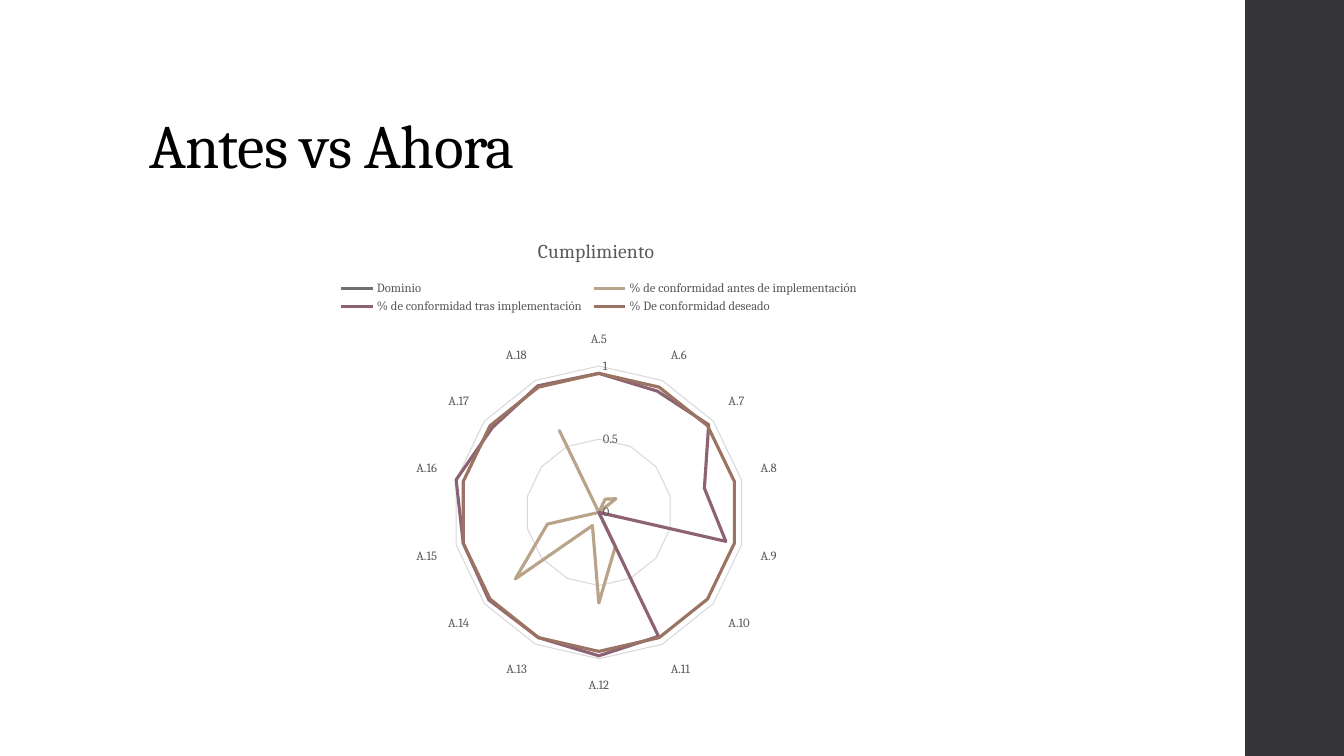
from lxml import etree
from pptx import Presentation
from pptx.chart.data import CategoryChartData
from pptx.dml.color import RGBColor
from pptx.enum.chart import XL_CHART_TYPE, XL_LEGEND_POSITION, XL_TICK_MARK
from pptx.enum.shapes import MSO_SHAPE
from pptx.enum.text import MSO_ANCHOR
from pptx.oxml.ns import qn
from pptx.util import Inches, Pt

RADAR = XL_CHART_TYPE.RADAR
LEGEND_TOP = XL_LEGEND_POSITION.TOP
NO_TICK = XL_TICK_MARK.NONE
RECTANGLE = MSO_SHAPE.RECTANGLE
BOTTOM = MSO_ANCHOR.BOTTOM

FONT = "Cambria"
BLACK = RGBColor(0x00, 0x00, 0x00)
DARK = RGBColor(0x35, 0x35, 0x37)
TEXT_GRAY = RGBColor(0x59, 0x59, 0x59)
GRID_GRAY = RGBColor(0xD9, 0xD9, 0xD9)
GRAY = RGBColor(0x6F, 0x6F, 0x74)
BLUE = RGBColor(0x92, 0xA9, 0xB9)
GREEN = RGBColor(0xA7, 0xB7, 0x89)
SAND = RGBColor(0xB9, 0xA4, 0x89)
PLUM = RGBColor(0x8D, 0x63, 0x74)
BROWN = RGBColor(0x9B, 0x73, 0x62)

SLIDE_TITLE = "Antes vs Ahora"
CHART_TITLE = "Cumplimiento"
DOMAINS = [f"A.{number}" for number in range(5, 19)]
EMPTY = [None] * len(DOMAINS)
SERIES = [
    ("Dominio", GRAY, [0] * len(DOMAINS)),
    ("Series 2", BLUE, EMPTY),
    ("Series 3", GREEN, EMPTY),
    ("% de conformidad antes de implementación", SAND,
     [0, 0.1, 0.15, 0, 0.14, 0, 0.26, 0.62, 0.1, 0.73, 0.36, 0, 0, 0.62]),
    ("% de conformidad tras implementación", PLUM,
     [0.95, 0.92, 0.96, 0.74, 0.89, 0, 0.94, 0.98, 0.95, 0.96, 0.95, 1, 0.93, 0.96]),
    ("% De conformidad deseado", BROWN, [0.95] * len(DOMAINS)),
]


def set_font(font, size, color):
    font.name = FONT
    font.size = Pt(size)
    font.bold = False
    font.color.rgb = color


def set_line(line, color, width):
    line.color.rgb = color
    line.width = Pt(width)


def write_text(frame, text, *, size, color, line_spacing=None, tracking=None):
    para = frame.paragraphs[0]
    span = para.add_run()
    span.text = text
    set_font(span.font, size, color)
    if line_spacing:
        para.line_spacing = line_spacing
    if tracking is not None:
        span.font._element.set("spc", str(round(tracking * 100)))


def place(parent, index, target=None, **fractions):
    """Fix a chart part at fractions of the chart's width and height."""
    for old in parent.findall(qn("c:layout")):
        parent.remove(old)
    layout = etree.Element(qn("c:layout"))
    manual = etree.SubElement(layout, qn("c:manualLayout"))
    settings = {"layoutTarget": target} if target else {}
    settings |= {"xMode": "edge", "yMode": "edge"} | fractions
    for name, value in settings.items():
        etree.SubElement(manual, qn(f"c:{name}")).set("val", str(value))
    parent.insert(index, layout)


def hide_empty_entries(legend):
    """Leave series without values out of the legend; return how many."""
    empty = [index for index, (_, _, values) in enumerate(SERIES) if values is EMPTY]
    for position, index in enumerate(empty, start=1):
        entry = etree.Element(qn("c:legendEntry"))
        etree.SubElement(entry, qn("c:idx")).set("val", str(index))
        etree.SubElement(entry, qn("c:delete")).set("val", "1")
        legend.insert(position, entry)
    return len(empty)


def add_side_band(page):
    band = page.shapes.add_shape(RECTANGLE, Inches(12.35), 0, Inches(1), Inches(7.5))
    band.shadow.inherit = False
    band.fill.solid()
    band.fill.fore_color.rgb = DARK
    band.line.fill.background()


def add_title(page):
    box = page.shapes.add_textbox(Inches(1.38), Inches(0.4), Inches(10.6), Inches(1.45))
    box.text_frame.word_wrap = True
    box.text_frame.vertical_anchor = BOTTOM
    write_text(box.text_frame, SLIDE_TITLE, size=44, color=BLACK,
               line_spacing=0.9, tracking=-0.5)


def add_radar(page):
    data = CategoryChartData()
    data.categories = DOMAINS
    for name, _, values in SERIES:
        data.add_series(name, values)
    chart = page.shapes.add_chart(RADAR, Inches(2.38), Inches(2.18),
                                  Inches(7.12), Inches(4.84), data).chart
    set_font(chart.font, 10, BLACK)

    for series, (_, color, _) in zip(chart.plots[0].series, SERIES):
        series.smooth = False
        set_line(series.format.line, color, 2.25)

    domain_axis, value_axis = chart.category_axis, chart.value_axis
    for axis in (domain_axis, value_axis):
        axis.major_tick_mark = axis.minor_tick_mark = NO_TICK
        set_font(axis.tick_labels.font, 9, TEXT_GRAY)
    domain_axis.has_major_gridlines = False
    set_line(domain_axis.format.line, GRID_GRAY, 0.75)
    value_axis.format.line.fill.background()
    value_axis.minimum_scale, value_axis.maximum_scale = 0, 1
    value_axis.major_unit = 0.5
    value_axis.has_major_gridlines = True
    set_line(value_axis.major_gridlines.format.line, GRID_GRAY, 0.75)
    value_axis.tick_labels.number_format = "General"
    value_axis.tick_labels.number_format_is_linked = False

    chart.has_title = True
    write_text(chart.chart_title.text_frame, CHART_TITLE, size=14, color=TEXT_GRAY)
    chart.has_legend = True
    chart.legend.position = LEGEND_TOP
    chart.legend.include_in_layout = False
    set_font(chart.legend.font, 9, TEXT_GRAY)

    parts = chart._chartSpace.chart
    legend = parts.find(qn("c:legend"))
    hidden = hide_empty_entries(legend)
    place(parts.find(qn("c:title")), 1, x=0.41, y=0.03)
    place(legend, 1 + hidden, x=0.13, y=0.12, w=0.74, h=0.08)
    place(parts.find(qn("c:plotArea")), 0, target="inner", x=0.29, y=0.3, w=0.42, h=0.6)


def main():
    deck = Presentation()
    deck.slide_width, deck.slide_height = Inches(13.33), Inches(7.5)
    page = deck.slides.add_slide(deck.slide_layouts[6])
    add_side_band(page)
    add_title(page)
    add_radar(page)
    deck.save("out.pptx")


if __name__ == "__main__":
    main()
